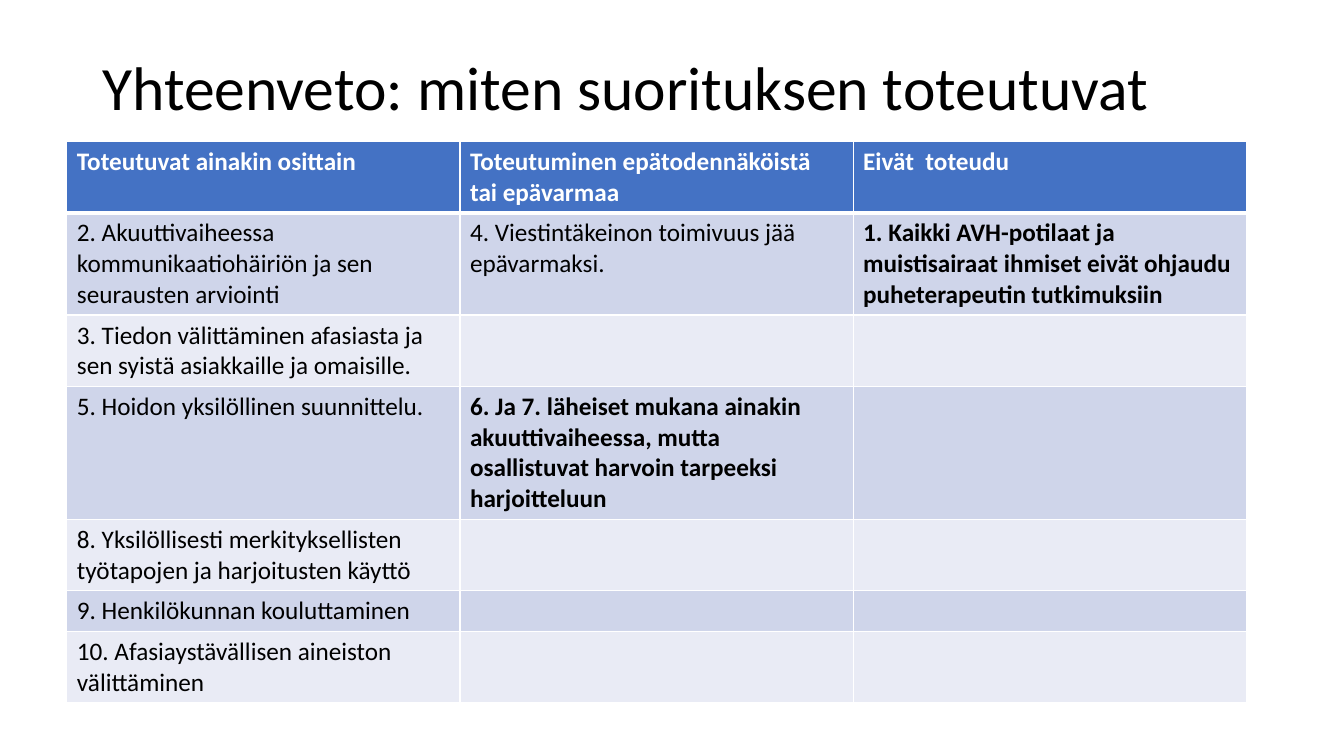
from lxml.etree import SubElement
from pptx import Presentation
from pptx.dml.color import RGBColor
from pptx.enum.text import MSO_ANCHOR
from pptx.oxml.ns import qn
from pptx.util import Pt

# Content
TITLE = "Yhteenveto: miten suorituksen toteutuvat"
HEADERS = [
    "Toteutuvat ainakin osittain",
    "Toteutuminen epätodennäköistä tai epävarmaa",
    "Eivät  toteudu",
]
ROWS = [
    ["2. Akuuttivaiheessa  kommunikaatiohäiriön ja sen seurausten arviointi",
     "4. Viestintäkeinon toimivuus jää epävarmaksi.",
     "1. Kaikki AVH-potilaat ja muistisairaat ihmiset eivät ohjaudu "
     "puheterapeutin tutkimuksiin"],
    ["3. Tiedon välittäminen afasiasta ja sen syistä asiakkaille ja omaisille.", "", ""],
    ["5. Hoidon yksilöllinen suunnittelu.",
     "6. Ja 7. läheiset mukana ainakin akuuttivaiheessa, mutta osallistuvat "
     "harvoin tarpeeksi harjoitteluun", ""],
    ["8. Yksilöllisesti merkityksellisten työtapojen ja harjoitusten käyttö", "", ""],
    ["9. Henkilökunnan kouluttaminen", "", ""],
    ["10. Afasiaystävällisen aineiston välittäminen", "", ""],
]
BOLD_CELLS = {(1, 2), (3, 1)}
LINES_PER_ROW = [2, 3, 2, 4, 2, 1, 2]

# Style and measures, in points
FONT = "Calibri"
BLACK, WHITE = "000000", "FFFFFF"
HEADER_FILL = "4472C4"
BAND_FILLS = ["E9EBF5", "CFD5EA"]
COLUMN_WIDTH = 280.8
LINE_HEIGHT, ROW_PADDING = 22, 7


def color(value):
    return RGBColor.from_string(value)


def format_text(paragraph, size, text_color, bold=False):
    for run in paragraph.runs:
        run.font.name = FONT
        run.font.size = Pt(size)
        run.font.bold = bold
        run.font.color.rgb = color(text_color)


def add_borders(cell, bottom_width):
    properties = cell._tc.get_or_add_tcPr()
    for side, width in (("L", 1), ("R", 1), ("T", 1), ("B", bottom_width)):
        line = SubElement(properties, qn(f"a:ln{side}"), w=str(Pt(width)))
        fill = SubElement(line, qn("a:solidFill"))
        SubElement(fill, qn("a:srgbClr"), val=WHITE)


presentation = Presentation()
presentation.slide_width, presentation.slide_height = Pt(960), Pt(540)
slide = presentation.slides.add_slide(presentation.slide_layouts[6])

# Title
title_frame = slide.shapes.add_textbox(Pt(66), Pt(28.75), Pt(842.4), Pt(72)).text_frame
title_frame.word_wrap = True
title_frame.vertical_anchor = MSO_ANCHOR.MIDDLE
title_frame.text = TITLE
title_frame.paragraphs[0].line_spacing = 0.9
format_text(title_frame.paragraphs[0], 44, BLACK)

# Table, each row as tall as its lines of text
cell_texts = [HEADERS] + ROWS
row_heights = [lines * LINE_HEIGHT + ROW_PADDING for lines in LINES_PER_ROW]
table = slide.shapes.add_table(
    len(cell_texts), len(HEADERS), Pt(47.75), Pt(101),
    Pt(COLUMN_WIDTH * len(HEADERS)), Pt(sum(row_heights))).table

for column in table.columns:
    column.width = Pt(COLUMN_WIDTH)

for row_index, texts in enumerate(cell_texts):
    table.rows[row_index].height = Pt(row_heights[row_index])
    is_header = row_index == 0
    for column_index, text in enumerate(texts):
        cell = table.cell(row_index, column_index)
        add_borders(cell, 3 if is_header else 1)
        cell.fill.solid()
        cell.fill.fore_color.rgb = color(
            HEADER_FILL if is_header else BAND_FILLS[row_index % 2])
        cell.text_frame.text = text
        format_text(cell.text_frame.paragraphs[0], 18,
                    WHITE if is_header else BLACK,
                    is_header or (row_index, column_index) in BOLD_CELLS)

presentation.save("out.pptx")
